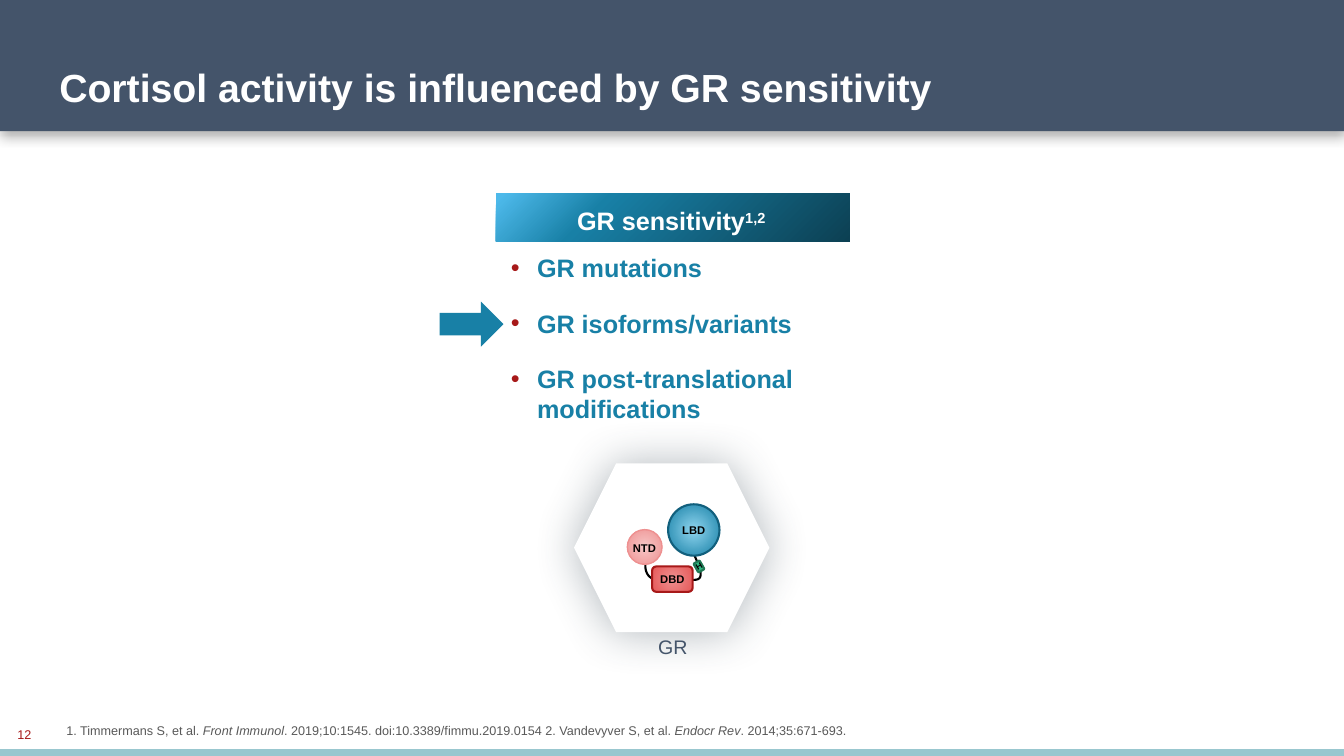
from pptx import Presentation
from pptx.dml.color import RGBColor
from pptx.enum.shapes import MSO_SHAPE
from pptx.enum.text import MSO_ANCHOR, PP_ALIGN
from pptx.oxml import parse_xml
from pptx.oxml.ns import nsdecls, qn
from pptx.util import Pt

WHITE = RGBColor(0xFF, 0xFF, 0xFF)
BLACK = RGBColor(0, 0, 0)
SLATE = RGBColor(0x44, 0x54, 0x6A)
SHADOW_GREY = RGBColor(0x3C, 0x4C, 0x58)
GREY = RGBColor(0x59, 0x59, 0x59)
PALE_TEAL = RGBColor(0x99, 0xC7, 0xCF)
RED = RGBColor(0xA7, 0x19, 0x19)
CORAL = RGBColor(0xE6, 0x59, 0x59)
PINK = RGBColor(0xEE, 0x90, 0x90)
PALE_PINK = RGBColor(0xF7, 0xC8, 0xC8)
SKY = RGBColor(0x4D, 0xB9, 0xEA)
PALE_BLUE = RGBColor(0x8F, 0xD5, 0xEF)
BLUE = RGBColor(0x18, 0x80, 0xA6)
DEEP_BLUE = RGBColor(0x12, 0x60, 0x7D)
NAVY = RGBColor(0x0C, 0x40, 0x53)
GREEN = RGBColor(0x2F, 0xB7, 0x80)
DARK_GREEN = RGBColor(0x1F, 0x77, 0x53)

CIRCULAR = ('<a:path path="circle"><a:fillToRect l="50000" t="50000" '
            'r="50000" b="50000"/></a:path>')
DIAGONAL = '<a:lin ang="2700000" scaled="0"/>'

prs = Presentation()
prs.slide_width, prs.slide_height = Pt(960), Pt(540)
slide = prs.slides.add_slide(prs.slide_layouts[6])
shapes = slide.shapes


def add_filled(kind, box, fill, direction=CIRCULAR, outline=None, shadow=None):
    """Add a shape; fill is one colour or a list of (percent, colour) stops."""
    shape = shapes.add_shape(kind, *map(Pt, box))
    shape.shadow.inherit = False
    shape.fill.solid()
    if isinstance(fill, list):
        stops = "".join(f'<a:gs pos="{pos * 1000}"><a:srgbClr val="{color}"/></a:gs>'
                        for pos, color in fill)
        solid = shape.fill._xPr.find(qn("a:solidFill"))
        solid.getparent().replace(solid, parse_xml(
            f'<a:gradFill {nsdecls("a")} rotWithShape="1"><a:gsLst>{stops}</a:gsLst>'
            f'{direction}</a:gradFill>'))
    else:
        shape.fill.fore_color.rgb = fill
    if outline:
        shape.line.color.rgb, shape.line.width = outline[0], Pt(outline[1])
    else:
        shape.line.fill.background()
    if shadow:
        color, opacity, blur, distance = shadow
        shape._element.spPr.find(qn("a:effectLst")).append(parse_xml(
            f'<a:outerShdw {nsdecls("a")} blurRad="{Pt(blur)}" dist="{Pt(distance)}" '
            f'dir="5400000" algn="ctr" rotWithShape="0"><a:srgbClr val="{color}">'
            f'<a:alpha val="{opacity * 1000}"/></a:srgbClr></a:outerShdw>'))
    return shape


def style(paragraph, size, color, bold=False, align=PP_ALIGN.LEFT):
    paragraph.alignment = align
    font = paragraph.font
    font.name, font.size, font.bold = "Arial", Pt(size), bold
    font.color.rgb = color


# Title band and footer strip
add_filled(MSO_SHAPE.RECTANGLE, (0, -0.7, 960, 94.3), SLATE, shadow=(BLACK, 30, 8, 4))
add_filled(MSO_SHAPE.RECTANGLE, (0, 535, 960, 7), PALE_TEAL)

# Sensitivity panel and its header
panel = add_filled(MSO_SHAPE.SNIP_2_DIAG_RECTANGLE, (354.3, 138.2, 252.8, 334), WHITE)
panel.adjustments[0], panel.adjustments[1] = 0.077, 0
add_filled(MSO_SHAPE.RECTANGLE, (354.3, 138.2, 252.8, 34.2),
           [(2, SKY), (29, BLUE), (100, NAVY)], DIAGONAL)

# Header text and bullets
factors = shapes.add_textbox(Pt(357.8), Pt(143.3), Pt(243.4), Pt(211)).text_frame
factors.word_wrap = True
heading = factors.paragraphs[0]
heading.add_run().text = "GR sensitivity"
citation = heading.add_run()
citation.text = "1,2"
citation.font._element.set("baseline", "30000")
style(heading, 18, WHITE, True, PP_ALIGN.CENTER)
for factor, gap in [("GR mutations", 12), ("GR isoforms/variants", 18),
                    ("GR post-translational modifications", 18)]:
    bullet = factors.add_paragraph()
    bullet.text = factor
    bullet.space_before = Pt(gap)
    properties = bullet._p.get_or_add_pPr()
    properties.set("marL", str(Pt(18.7)))
    properties.set("indent", str(-Pt(18.7)))
    properties.append(parse_xml(
        f'<a:buClr {nsdecls("a")}><a:srgbClr val="{RED}"/></a:buClr>'))
    properties.append(parse_xml(f'<a:buFont {nsdecls("a")} typeface="Arial"/>'))
    properties.append(parse_xml(f'<a:buChar {nsdecls("a")} char="•"/>'))
    style(bullet, 18, BLUE, True)

# Receptor hexagon
add_filled(MSO_SHAPE.HEXAGON, (410, 331, 139.6, 120.5), WHITE,
           shadow=(SHADOW_GREY, 40, 33, 0))

# Linkers between the domains, as sampled cubic curves
STEPS = 16
for linker in [((462.2, 396.7), (460.1, 403.9), (460.1, 411.1), (467.3, 414)),
               ((495.4, 395.3), (502.6, 411.1), (502.6, 415.4), (492.5, 414))]:
    points = []
    for step in range(STEPS + 1):
        t = step / STEPS
        weights = ((1 - t) ** 3, 3 * t * (1 - t) ** 2, 3 * t * t * (1 - t), t ** 3)
        points.append(tuple(Pt(sum(w * p[axis] for w, p in zip(weights, linker)))
                            for axis in (0, 1)))
    builder = shapes.build_freeform(*points[0])
    builder.add_line_segments(points[1:], close=False)
    curve = builder.convert_to_shape()
    curve.shadow.inherit = False
    curve.fill.background()
    curve.line.color.rgb, curve.line.width = BLACK, Pt(1.5)

# Receptor domains
for name, kind, box, fill, outline, size, rotation in [
    ("LBD", MSO_SHAPE.OVAL, (477.2, 360.2, 36.7, 36.7),
     [(0, PALE_BLUE), (96, BLUE)], (DEEP_BLUE, 1.5), 8, 0),
    ("", MSO_SHAPE.OVAL, (448.1, 378.3, 24.8, 24.8),
     [(0, PALE_PINK), (100, PINK)], (PINK, 1), 8, 0),
    ("DBD", MSO_SHAPE.ROUNDED_RECTANGLE, (465.8, 404.6, 29, 18.2),
     [(0, PINK), (100, CORAL)], (RED, 1.5), 8, 0),
    ("H", MSO_SHAPE.ROUNDED_RECTANGLE, (496.8, 401, 5, 7.2),
     GREEN, (DARK_GREEN, 1.5), 6, 330.6),
]:
    domain = add_filled(kind, box, fill, outline=outline)
    domain.rotation = rotation
    if name:
        frame = domain.text_frame
        frame.margin_left = frame.margin_right = 0
        frame.vertical_anchor = MSO_ANCHOR.MIDDLE
        frame.text = name
        style(frame.paragraphs[0], size, BLACK, True, PP_ALIGN.CENTER)

# Arrow marking the isoforms
add_filled(MSO_SHAPE.RIGHT_ARROW, (314, 215.4, 45.6, 32.2), BLUE)

# Title, labels, slide number and references; odd pieces are italic
for pieces, box, anchor, wrap, size, color, bold, align in [
    (["Cortisol activity is influenced by GR sensitivity"], (35.3, 6.5, 902, 76.3),
     MSO_ANCHOR.BOTTOM, True, 28, WHITE, True, PP_ALIGN.LEFT),
    (["NTD"], (445, 383, 31, 17.3), MSO_ANCHOR.TOP, False, 8, BLACK, True, PP_ALIGN.LEFT),
    (["GR"], (463, 450, 36, 24.5), MSO_ANCHOR.TOP, False, 14, SLATE, False, PP_ALIGN.LEFT),
    (["12"], (0.7, 510.5, 28.8, 28.8), MSO_ANCHOR.MIDDLE, True, 9, RED, False,
     PP_ALIGN.RIGHT),
    (["1. Timmermans S, et al. ", "Front Immunol",
      ". 2019;10:1545. doi:10.3389/fimmu.2019.0154 2. Vandevyver S, et al. ",
      "Endocr Rev", ". 2014;35:671-693."], (40.3, 489.6, 795, 41),
     MSO_ANCHOR.BOTTOM, True, 9, GREY, False, PP_ALIGN.LEFT),
]:
    frame = shapes.add_textbox(*map(Pt, box)).text_frame
    frame.word_wrap, frame.vertical_anchor = wrap, anchor
    line = frame.paragraphs[0]
    for index, piece in enumerate(pieces):
        run = line.add_run()
        run.text = piece
        if index % 2:
            run.font.italic = True
    style(line, size, color, bold, align)
    if size == 28:
        line.line_spacing = 0.9

prs.save("out.pptx")
